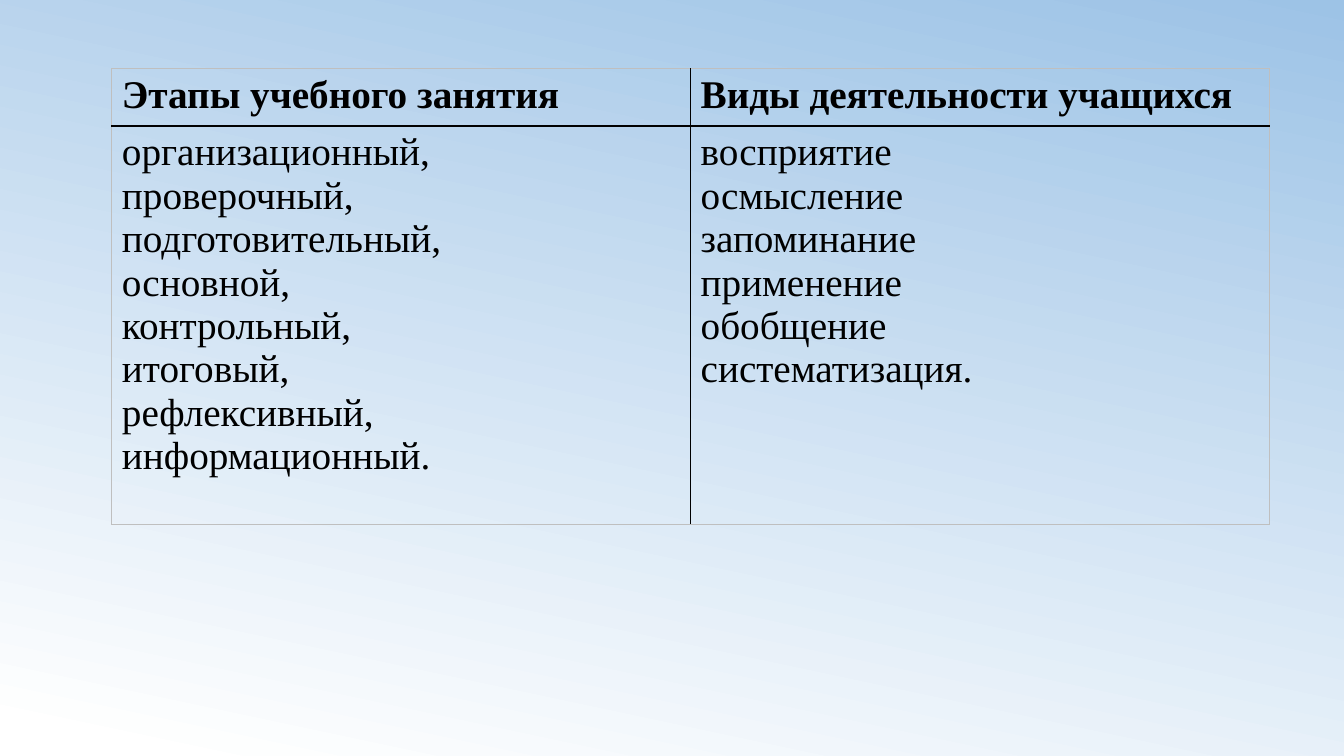
from dataclasses import dataclass

from lxml.etree import SubElement
from pptx import Presentation
from pptx.dml.color import RGBColor
from pptx.oxml.ns import qn
from pptx.util import Inches, Pt


@dataclass(frozen=True)
class Theme:
    font: str = "Times New Roman"
    size: int = 28
    text: str = "000000"
    inner_line: str = "000000"
    outer_line: str = "BFBFBF"
    inner_width: float = 1
    outer_width: float = 0.75
    sky: str = "9DC3E6"
    white: str = "FFFFFF"


THEME = Theme()
STAGES = [
    "организационный,", "проверочный,", "подготовительный,", "основной,",
    "контрольный,", "итоговый,", "рефлексивный,", "информационный.",
]
ACTIVITIES = [
    "восприятие", "осмысление", "запоминание",
    "применение", "обобщение", "систематизация.",
]
ROWS = [
    [["Этапы учебного занятия"], ["Виды деятельности учащихся"]],
    [STAGES, ACTIVITIES],
]
ROW_HEIGHTS = [0.57, 3.95]
COLUMN_WIDTH = 5.74


def paint_background(page):
    fill = page.background.fill
    fill.gradient()
    fill.gradient_angle = 258
    colours = [(0, THEME.sky), (0.97, THEME.white)]
    for stop, (position, colour) in zip(fill.gradient_stops, colours):
        stop.position = position
        stop.color.rgb = RGBColor.from_string(colour)


def add_border(cell, side, inner):
    colour = THEME.inner_line if inner else THEME.outer_line
    width = THEME.inner_width if inner else THEME.outer_width
    properties = cell._tc.get_or_add_tcPr()
    line = SubElement(properties, qn(f"a:{side}"), w=str(Pt(width)))
    solid = SubElement(line, qn("a:solidFill"))
    SubElement(solid, qn("a:srgbClr"), val=colour)


def fill_cell(cell, lines, bold):
    frame = cell.text_frame
    frame.text = "\n".join(lines)
    for para in frame.paragraphs:
        para.font.name = THEME.font
        para.font.size = Pt(THEME.size)
        para.font.bold = bold
        para.font.color.rgb = RGBColor.from_string(THEME.text)


def add_stage_table(page):
    frame = page.shapes.add_table(
        len(ROWS), len(ROWS[0]), Inches(1.11), Inches(0.68),
        Inches(COLUMN_WIDTH * len(ROWS[0])), Inches(sum(ROW_HEIGHTS)),
    )
    table = frame.table
    table.first_row = False
    table.horz_banding = False
    for column in table.columns:
        column.width = Inches(COLUMN_WIDTH)
    for r, (texts, height) in enumerate(zip(ROWS, ROW_HEIGHTS)):
        table.rows[r].height = Inches(height)
        for c, lines in enumerate(texts):
            cell = table.cell(r, c)
            fill_cell(cell, lines, bold=r == 0)
            add_border(cell, "lnL", inner=c > 0)
            add_border(cell, "lnR", inner=c < len(texts) - 1)
            add_border(cell, "lnT", inner=r > 0)
            add_border(cell, "lnB", inner=r < len(ROWS) - 1)
            cell.fill.background()


def main():
    deck = Presentation()
    deck.slide_width = Inches(13.33)
    deck.slide_height = Inches(7.5)
    page = deck.slides.add_slide(deck.slide_layouts[6])
    paint_background(page)
    add_stage_table(page)
    deck.save("out.pptx")


if __name__ == "__main__":
    main()
